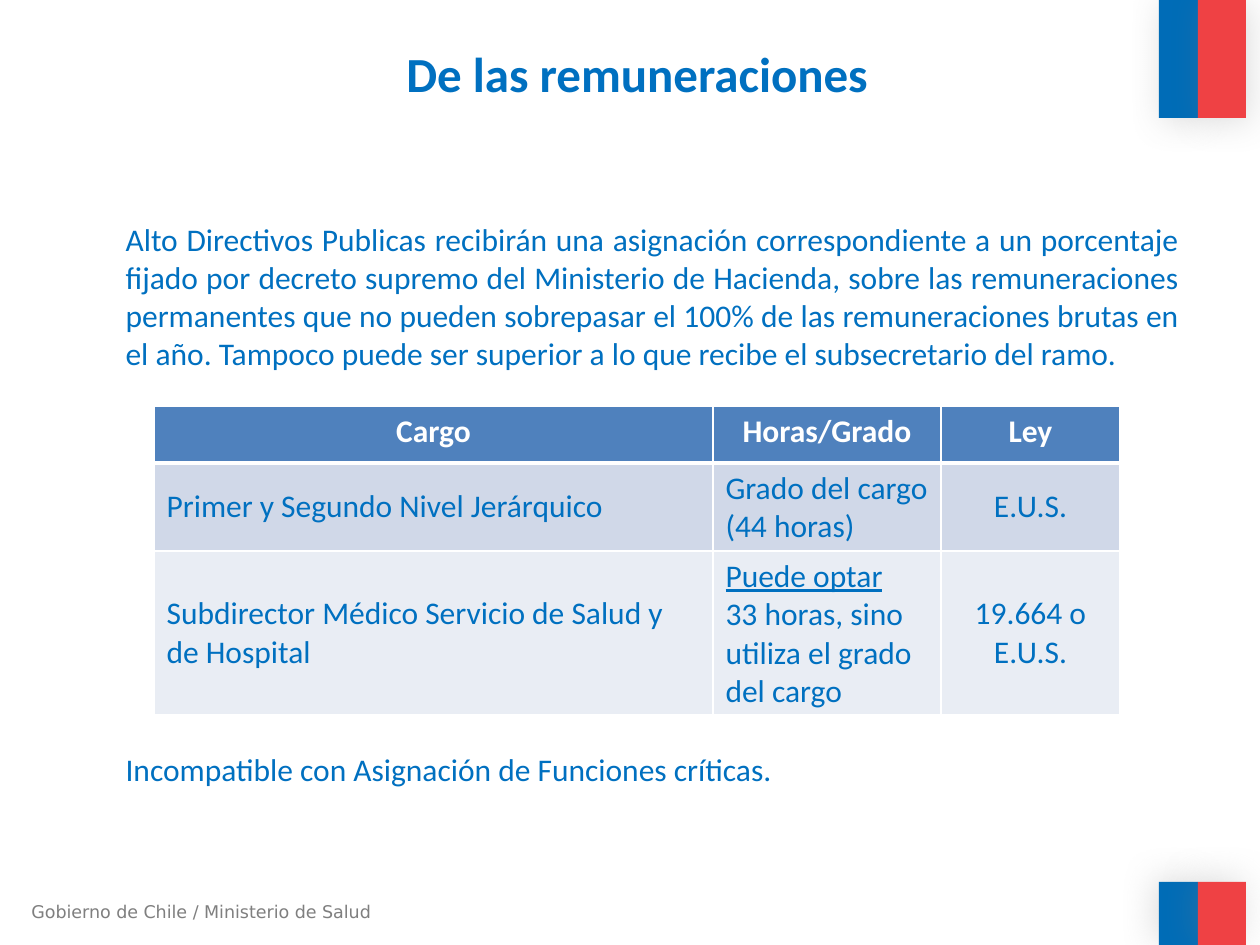
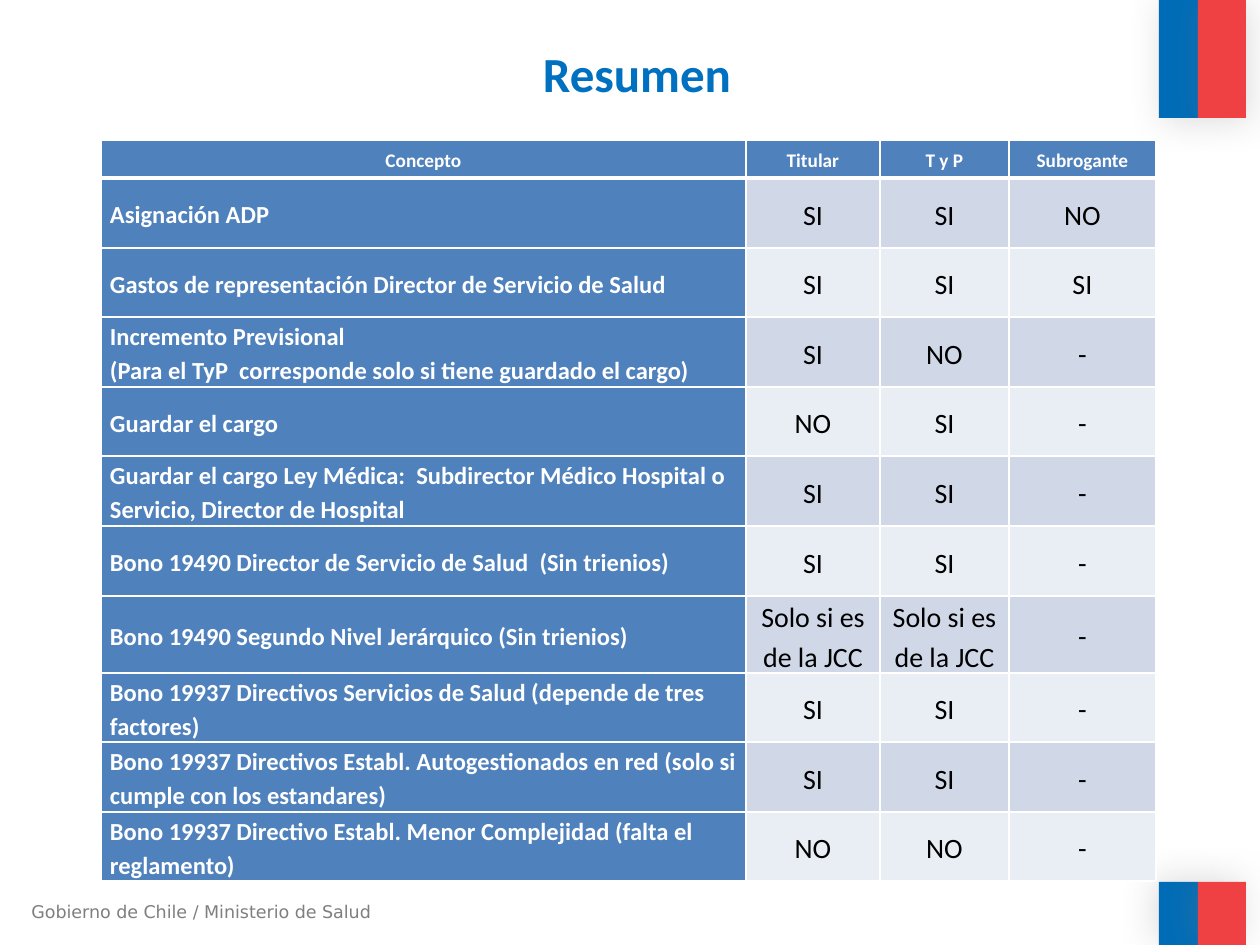
from lxml.etree import SubElement
from pptx import Presentation
from pptx.dml.color import RGBColor
from pptx.enum.shapes import MSO_SHAPE
from pptx.enum.text import MSO_ANCHOR, MSO_AUTO_SIZE, PP_ALIGN
from pptx.oxml.ns import qn
from pptx.util import Pt

SCALE = 914400 / 126  # EMU per px
COLORS = {
    "blue": "0070C0", "flag": "006CB7", "red": "EF4144", "gray": "7F7F7F",
    "shade": "808080", "white": "FFFFFF", "black": "000000",
    "head": "4F81BD", "odd": "D0D8E8", "even": "E9EDF4",
}
FONT = "Calibri"
LEFT, CENTER = PP_ALIGN.LEFT, PP_ALIGN.CENTER

INTRO = (
    "Alto Directivos Publicas recibirán una asignación correspondiente a un "
    "porcentaje fijado por decreto supremo del Ministerio de Hacienda, sobre "
    "las remuneraciones permanentes que no pueden sobrepasar el 100% de las "
    "remuneraciones brutas en el año. Tampoco puede ser superior a lo que "
    "recibe el subsecretario del ramo."
)
CLOSING = "Incompatible con Asignación de Funciones críticas."
POSTS = [
    ("Cargo", "Horas/Grado", "Ley"),
    ("Primer y Segundo Nivel Jerárquico", "Grado del cargo (44 horas)", "E.U.S."),
    ("Subdirector Médico Servicio de Salud y de Hospital",
     "Puede optar\n33 horas, sino utiliza el grado del cargo", "19.664 o E.U.S."),
]
JCC = "Solo si es de la JCC"
ITEMS = [
    ("Concepto", "Titular", "T y P", "Subrogante"),
    ("Asignación ADP", "SI", "SI", "NO"),
    ("Gastos de representación Director de Servicio de Salud", "SI", "SI", "SI"),
    ("Incremento Previsional\n"
     "(Para el TyP  corresponde solo si tiene guardado el cargo)", "SI", "NO", "-"),
    ("Guardar el cargo", "NO", "SI", "-"),
    ("Guardar el cargo Ley Médica:  Subdirector Médico Hospital o Servicio, "
     "Director de Hospital", "SI", "SI", "-"),
    ("Bono 19490 Director de Servicio de Salud  (Sin trienios)", "SI", "SI", "-"),
    ("Bono 19490 Segundo Nivel Jerárquico (Sin trienios)", JCC, JCC, "-"),
    ("Bono 19937 Directivos Servicios de Salud (depende de tres factores)",
     "SI", "SI", "-"),
    ("Bono 19937 Directivos Establ. Autogestionados en red (solo si cumple con "
     "los estandares)", "SI", "SI", "-"),
    ("Bono 19937 Directivo Establ. Menor Complejidad (falta el reglamento)",
     "NO", "NO", "-"),
]


def px(n):
    return round(n * SCALE)


def rgb(name):
    return RGBColor.from_string(COLORS[name])


def place(shape, x, y, w, h):
    shape.left, shape.top, shape.width, shape.height = map(px, (x, y, w, h))


def style(para, size, color, bold=False, align=LEFT, face=FONT):
    para.alignment = align
    font = para.font
    font.name, font.size, font.bold = face, Pt(size), bold
    font.color.rgb = rgb(color)


# Shared parts: flag bands, footer, title
def band(slide, x, y, w, h, color, angle):
    shape = slide.shapes.add_shape(MSO_SHAPE.RECTANGLE, *map(px, (x, y, w, h)))
    shape.fill.solid()
    shape.fill.fore_color.rgb = rgb(color)
    shape.line.fill.background()
    shape.shadow.inherit = False
    effects = shape._element.spPr.find(qn("a:effectLst"))
    outer = SubElement(effects, qn("a:outerShdw"), blurRad=str(Pt(20)),
                       dist=str(Pt(3)), dir=str(angle * 60000), rotWithShape="0")
    tint = SubElement(outer, qn("a:srgbClr"), val=COLORS["shade"])
    SubElement(tint, qn("a:alpha"), val="25000")


def flags(slide):
    for y, h, angle in ((0, 118, 45), (882, 63, 215)):
        band(slide, 1159, y, 39, h, "flag", angle)
        band(slide, 1198, y, 48, h, "red", angle)


def footer(slide):
    box = slide.shapes.add_textbox(*map(px, (19, 895, 381, 34)))
    box.text_frame.word_wrap = True
    box.text_frame.text = "Gobierno de Chile / Ministerio de Salud"
    style(box.text_frame.paragraphs[0], 10, "gray", face="DejaVu Sans")


def title(slide, text):
    shape = slide.shapes.title
    place(shape, 154, 37, 966, 100)
    frame = shape.text_frame
    frame.text = text
    frame.vertical_anchor = MSO_ANCHOR.TOP
    frame.auto_size = MSO_AUTO_SIZE.NONE
    style(frame.paragraphs[0], 28, "blue", True, CENTER)


def start(deck, layout, text):
    slide = deck.slides.add_slide(deck.slide_layouts[layout])
    flags(slide)
    footer(slide)
    title(slide, text)
    return slide


# Body text around the table
def body(slide, intro, closing):
    shape = slide.placeholders[1]
    place(shape, 113, 214, 1079, 624)
    frame = shape.text_frame
    frame.auto_size = MSO_AUTO_SIZE.NONE
    frame.text = f"{intro}\n{closing}"
    aligns = (PP_ALIGN.JUSTIFY, LEFT)
    for para, align, gap in zip(frame.paragraphs, aligns, (0, 216)):
        props = para._p.get_or_add_pPr()
        props.set("marL", "0")
        props.set("indent", "0")
        SubElement(props, qn("a:buNone"))
        para.space_before = Pt(gap)
        style(para, 18, "blue", align=align)


# Tables
def border(cell, row):
    props = cell._tc.get_or_add_tcPr()
    widths = {"L": 1, "R": 1, "T": 3 if row == 1 else 1, "B": 3 if row == 0 else 1}
    for side, width in widths.items():
        line = SubElement(props, qn(f"a:ln{side}"), w=str(Pt(width)))
        fill = SubElement(line, qn("a:solidFill"))
        SubElement(fill, qn("a:srgbClr"), val=COLORS["white"])


def grid(slide, x, y, cols, rows, data):
    frame = slide.shapes.add_table(
        len(rows), len(cols), *map(px, (x, y, sum(cols), sum(rows))))
    table = frame.table
    table.horz_banding = False
    for col, w in zip(table.columns, cols):
        col.width = px(w)
    for row, h in zip(table.rows, rows):
        row.height = px(h)
    for r, texts in enumerate(data):
        for c, text in enumerate(texts):
            cell = table.cell(r, c)
            cell.text = text
            cell.vertical_anchor = MSO_ANCHOR.MIDDLE
            border(cell, r)
    return table


def paint(cell, fill, size, color, bold, align):
    cell.fill.solid()
    cell.fill.fore_color.rgb = rgb(fill)
    for para in cell.text_frame.paragraphs:
        style(para, size, color, bold, align)


def stripe(row):
    return "odd" if row % 2 else "even"


def posts(slide):
    table = grid(slide, 154, 406, (559, 228, 179), (57, 88, 164), POSTS)
    for r in range(len(POSTS)):
        for c in range(3):
            cell = table.cell(r, c)
            if r == 0:
                cell.vertical_anchor = MSO_ANCHOR.TOP
                paint(cell, "head", 18, "white", True, CENTER)
            else:
                align = CENTER if c == 2 else LEFT
                paint(cell, stripe(r), 18, "blue", False, align)
    table.cell(2, 1).text_frame.paragraphs[0].font.underline = True


def summary(slide):
    rows = (38, 70, 69, 70, 69, 70, 70, 77, 69, 70, 69)
    table = grid(slide, 101, 140, (645, 134, 129, 147), rows, ITEMS)
    for r in range(len(ITEMS)):
        for c in range(4):
            cell = table.cell(r, c)
            cell.margin_left = cell.margin_right = px(9)
            cell.margin_top = cell.margin_bottom = 0
            if r == 0:
                paint(cell, "head", 11, "white", True, CENTER)
            elif c == 0:
                paint(cell, "head", 14, "white", True, LEFT)
            else:
                paint(cell, stripe(r), 16, "black", False, CENTER)
            for para in cell.text_frame.paragraphs:
                para.line_spacing = 1.15


def main():
    deck = Presentation()
    deck.slide_width, deck.slide_height = px(1260), px(945)

    pay = start(deck, 1, "De las remuneraciones")
    body(pay, INTRO, CLOSING)
    posts(pay)

    summary(start(deck, 5, "Resumen"))
    deck.save("out.pptx")


if __name__ == "__main__":
    main()
